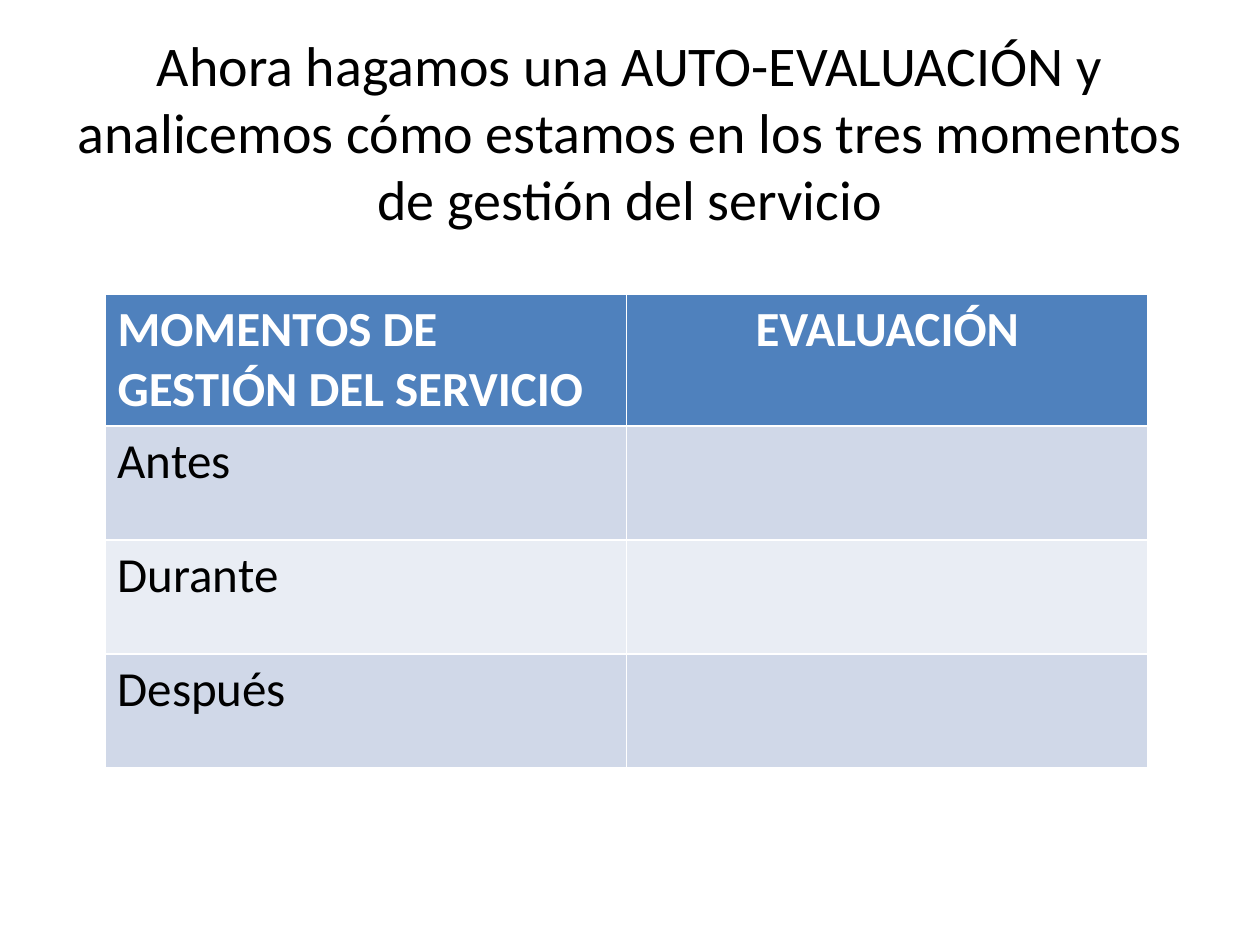
from dataclasses import dataclass

from pptx import Presentation
from pptx.dml.color import RGBColor
from pptx.enum.text import MSO_ANCHOR, PP_ALIGN
from pptx.util import Inches, Pt

PX_PER_INCH = 126


@dataclass(frozen=True)
class Theme:
    """Colours and type sizes of the slide."""

    font: str = "Calibri"
    title_size: int = 32
    table_size: int = 28
    ink: str = "000000"
    header_ink: str = "FFFFFF"
    header_fill: str = "4F81BD"
    band_fills: tuple = ("D0D8E8", "E9EDF4")


THEME = Theme()
TITLE = (
    "Ahora hagamos una AUTO-EVALUACIÓN y analicemos cómo estamos "
    "en los tres momentos de gestión del servicio"
)
HEADERS = ("MOMENTOS DE GESTIÓN DEL SERVICIO", "EVALUACIÓN")
MOMENTS = ("Antes", "Durante", "Después")


def px(length):
    """Turn a length in px into EMU."""
    return Inches(length / PX_PER_INCH)


def write(text_frame, text, size, color, bold=False, align=PP_ALIGN.LEFT):
    """Set one formatted paragraph in a text frame."""
    text_frame.text = text
    paragraph = text_frame.paragraphs[0]
    paragraph.alignment = align
    for run in paragraph.runs:
        run.font.name = THEME.font
        run.font.size = Pt(size)
        run.font.bold = bold
        run.font.color.rgb = RGBColor.from_string(color)


def fill_cell(cell, color):
    """Give a table cell a solid fill."""
    cell.fill.solid()
    cell.fill.fore_color.rgb = RGBColor.from_string(color)


def add_title(slide, left, top, width, height):
    """Add the centred slide title."""
    title = slide.shapes.add_textbox(px(left), px(top), px(width), px(height))
    title.text_frame.word_wrap = True
    title.text_frame.vertical_anchor = MSO_ANCHOR.MIDDLE
    write(title.text_frame, TITLE, THEME.title_size, THEME.ink, align=PP_ALIGN.CENTER)


def add_evaluation_table(slide, left, top, width, header_height, row_height):
    """Add the table of service moments with an open evaluation column."""
    height = header_height + row_height * len(MOMENTS)
    evaluation = slide.shapes.add_table(
        len(MOMENTS) + 1, len(HEADERS), px(left), px(top), px(width), px(height)
    ).table
    evaluation.rows[0].height = px(header_height)
    for column, (header, align) in enumerate(
        zip(HEADERS, (PP_ALIGN.LEFT, PP_ALIGN.CENTER))
    ):
        cell = evaluation.cell(0, column)
        fill_cell(cell, THEME.header_fill)
        write(cell.text_frame, header, THEME.table_size, THEME.header_ink, True, align)
    for row, moment in enumerate(MOMENTS, start=1):
        evaluation.rows[row].height = px(row_height)
        for cell in evaluation.rows[row].cells:
            fill_cell(cell, THEME.band_fills[(row - 1) % len(THEME.band_fills)])
        write(evaluation.cell(row, 0).text_frame, moment, THEME.table_size, THEME.ink)


def main():
    """Build and save the slide."""
    presentation = Presentation()
    presentation.slide_width = px(1260)
    presentation.slide_height = px(945)
    slide = presentation.slides.add_slide(presentation.slide_layouts[6])
    add_title(slide, 63, 38, 1134, 186)
    add_evaluation_table(slide, 105, 294, 1043, 132, 114)
    presentation.save("out.pptx")


if __name__ == "__main__":
    main()
